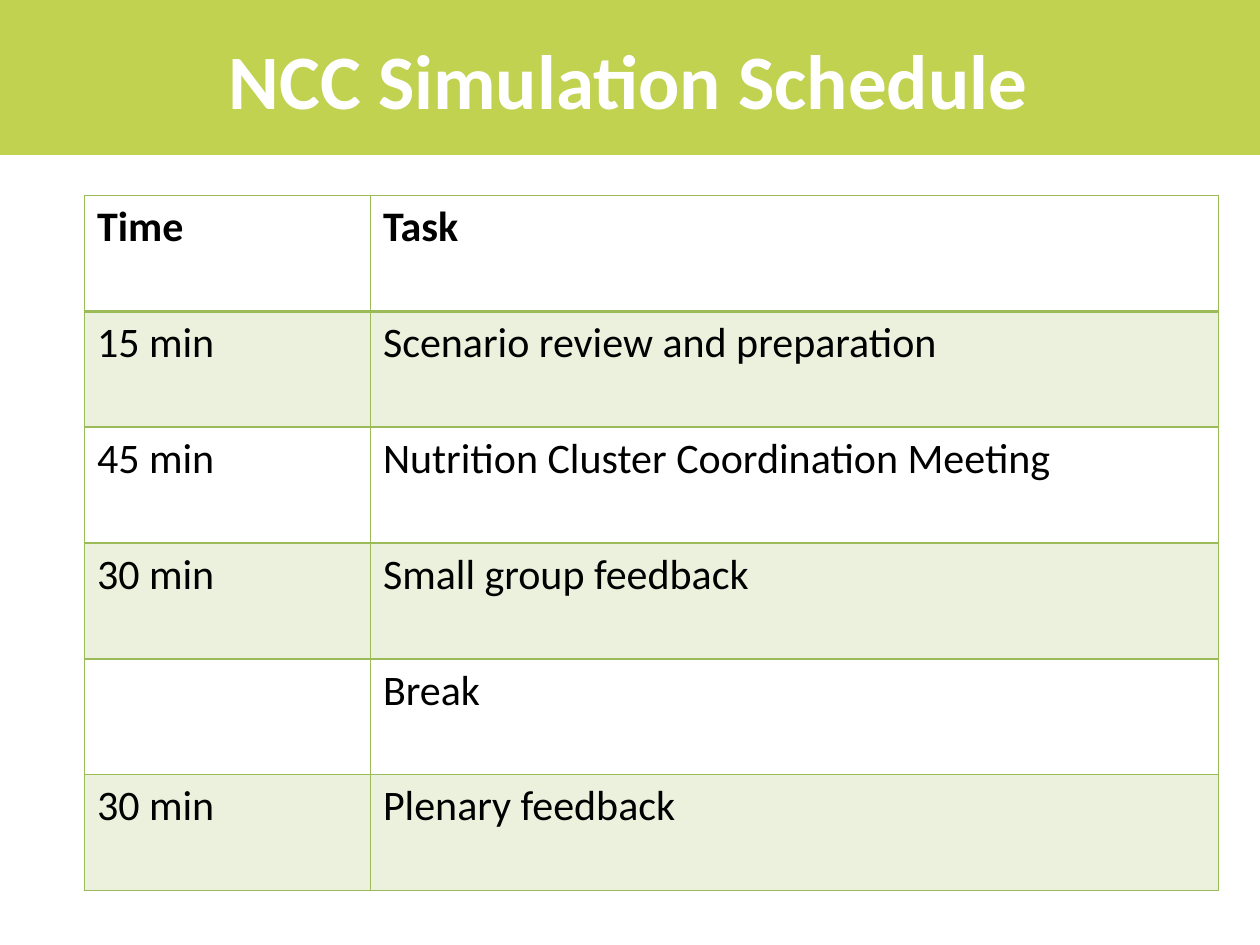
from typing import NamedTuple

import pptx
import pptx.dml.color
import pptx.enum.shapes
import pptx.enum.text
import pptx.oxml.ns
import pptx.util
from lxml import etree
from pptx.util import Inches

COLORS = {"band": "C1D150", "grid": "9BBB59", "title": "FFFFFF", "text": "000000"}
FONT = "Calibri"
STRIPE_ALPHA = 20


class Activity(NamedTuple):
    time: str
    task: str


SCHEDULE = [
    Activity("Time", "Task"),
    Activity("15 min", "Scenario review and preparation"),
    Activity("45 min", "Nutrition Cluster Coordination Meeting"),
    Activity("30 min", "Small group feedback"),
    Activity("", "Break"),
    Activity("30 min", "Plenary feedback"),
]
COLUMN_WIDTHS = (2.27, 6.73)
ROW_HEIGHT = 0.92


def rgb(name: str) -> pptx.dml.color.RGBColor:
    return pptx.dml.color.RGBColor.from_string(COLORS[name])


def style_text(paragraph, size: float, color: str, bold: bool) -> None:
    font = paragraph.font
    font.name = FONT
    font.size = pptx.util.Pt(size)
    font.bold = bold
    font.color.rgb = rgb(color)


def add_child(parent, tag: str, **attributes: str):
    return etree.SubElement(parent, pptx.oxml.ns.qn(tag), **attributes)


def set_borders(cell, top: float, bottom: float) -> None:
    properties = cell._tc.get_or_add_tcPr()
    for side, points in {"L": 1, "R": 1, "T": top, "B": bottom}.items():
        line = add_child(properties, f"a:ln{side}", w=str(pptx.util.Pt(points)))
        fill = add_child(line, "a:solidFill")
        add_child(fill, "a:srgbClr", val=COLORS["grid"])


def fill_stripe(cell) -> None:
    cell.fill.solid()
    cell.fill.fore_color.rgb = rgb("grid")
    color = cell._tc.tcPr.find("/".join(map(pptx.oxml.ns.qn, ("a:solidFill", "a:srgbClr"))))
    add_child(color, "a:alpha", val=str(STRIPE_ALPHA * 1000))


def add_title(slide, title: str) -> None:
    band = slide.shapes.add_shape(
        pptx.enum.shapes.MSO_SHAPE.RECTANGLE,
        Inches(0), Inches(-0.02), Inches(10), Inches(1.25),
    )
    band.shadow.inherit = False
    band.fill.solid()
    band.fill.fore_color.rgb = rgb("band")
    band.line.fill.background()

    heading = slide.shapes.add_textbox(Inches(0.49), Inches(0), Inches(9), Inches(1.25))
    frame = heading.text_frame
    frame.word_wrap = True
    frame.vertical_anchor = pptx.enum.text.MSO_ANCHOR.MIDDLE
    paragraph = frame.paragraphs[0]
    paragraph.text = title
    paragraph.alignment = pptx.enum.text.PP_ALIGN.CENTER
    style_text(paragraph, 44, "title", True)


def add_schedule(slide, activities: list[Activity]) -> None:
    table = slide.shapes.add_table(
        len(activities), len(COLUMN_WIDTHS), Inches(0.67), Inches(1.55),
        Inches(sum(COLUMN_WIDTHS)), Inches(ROW_HEIGHT * len(activities)),
    ).table
    table.first_row = False
    table.horz_banding = False
    for column, width in zip(table.columns, COLUMN_WIDTHS):
        column.width = Inches(width)
    for index, (row, activity) in enumerate(zip(table.rows, activities)):
        row.height = Inches(ROW_HEIGHT)
        for cell, text in zip(row.cells, activity):
            set_borders(cell, top=2 if index == 1 else 1, bottom=2 if index == 0 else 1)
            if index % 2:
                fill_stripe(cell)
            else:
                cell.fill.background()
            paragraph = cell.text_frame.paragraphs[0]
            if text:
                paragraph.text = text
            style_text(paragraph, 24, "text", index == 0)


def main() -> None:
    presentation = pptx.Presentation()
    presentation.slide_width = Inches(10)
    presentation.slide_height = Inches(7.5)
    slide = presentation.slides.add_slide(presentation.slide_layouts[6])
    add_title(slide, "NCC Simulation Schedule")
    add_schedule(slide, SCHEDULE)
    presentation.save("out.pptx")


if __name__ == "__main__":
    main()
